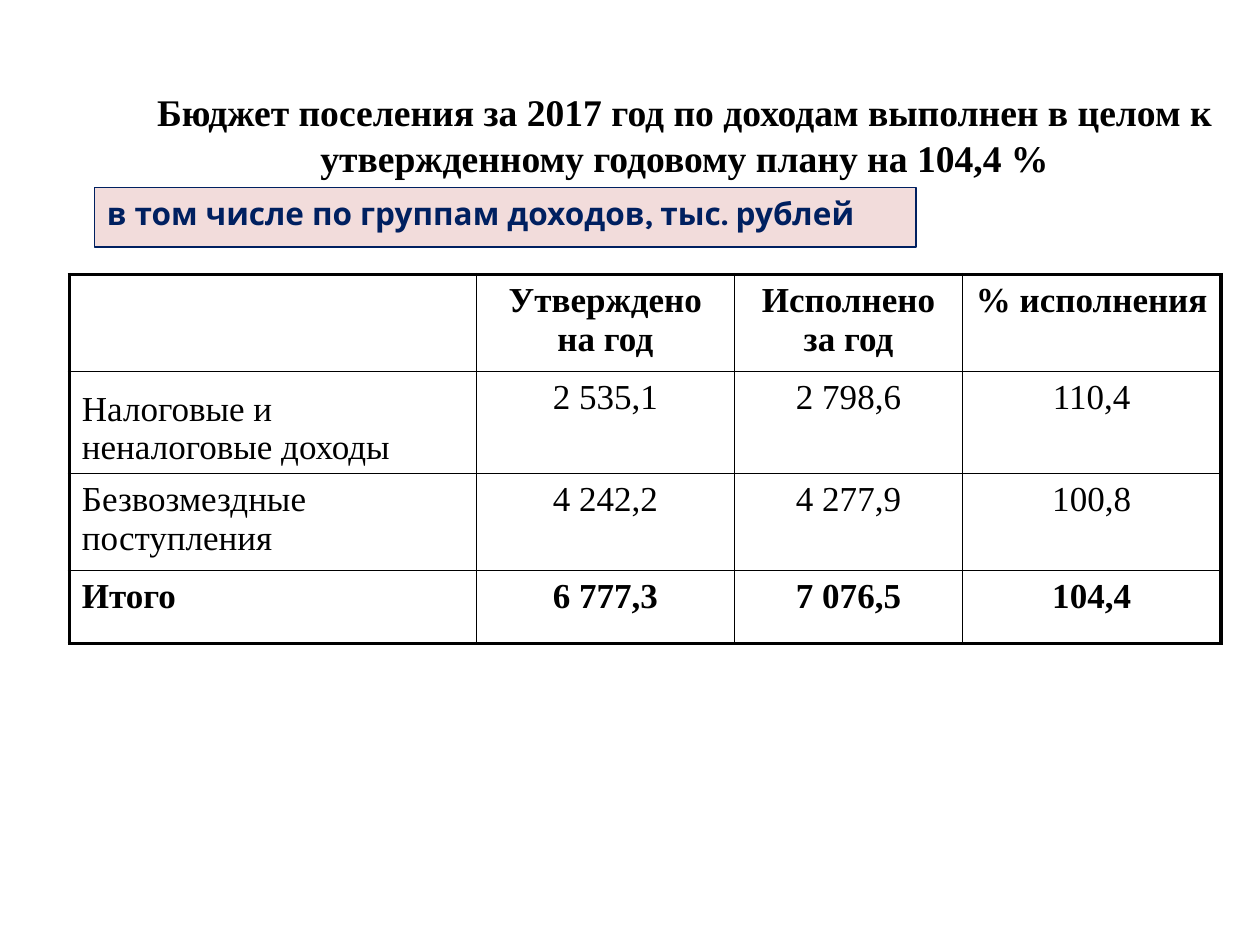
from lxml import etree
from pptx import Presentation
from pptx.dml.color import RGBColor
from pptx.enum.shapes import MSO_SHAPE
from pptx.enum.text import MSO_ANCHOR, PP_ALIGN
from pptx.oxml.ns import qn
from pptx.util import Inches, Pt

COLORS = {"black": "000000", "navy": "002060", "pink": "F2DCDB"}


def add_text(text_frame, text, size, font, color, bold, alignment):
    paragraph = text_frame.paragraphs[0]
    paragraph.alignment = alignment
    run = paragraph.add_run()
    run.text = text
    run.font.size = Pt(size)
    run.font.name = font
    run.font.bold = bold
    run.font.color.rgb = RGBColor.from_string(COLORS[color])


def set_borders(cell, widths):
    properties = cell._tc.get_or_add_tcPr()
    for position, (side, width) in enumerate(widths.items()):
        line = etree.Element(qn(f"a:{side}"), w=str(Pt(width)))
        fill = etree.SubElement(line, qn("a:solidFill"))
        etree.SubElement(fill, qn("a:srgbClr"), val=COLORS["black"])
        properties.insert(position, line)


presentation = Presentation()
presentation.slide_width = Inches(10)
presentation.slide_height = Inches(7.5)
slide = presentation.slides.add_slide(presentation.slide_layouts[6])

# Title
title = slide.shapes.add_textbox(Inches(1.02), Inches(0.66), Inches(8.83), Inches(0.82))
title.text_frame.word_wrap = True
add_text(
    title.text_frame,
    "Бюджет поселения за 2017 год по доходам выполнен в целом к утвержденному годовому плану на 104,4 %",
    21.5, "Times New Roman", "black", True, PP_ALIGN.CENTER,
)

# Subtitle box
subtitle = slide.shapes.add_shape(
    MSO_SHAPE.RECTANGLE, Inches(0.75), Inches(1.49), Inches(6.52), Inches(0.47)
)
subtitle.shadow.inherit = False
subtitle.fill.solid()
subtitle.fill.fore_color.rgb = RGBColor.from_string(COLORS["pink"])
subtitle.line.color.rgb = RGBColor.from_string(COLORS["navy"])
subtitle.line.width = Pt(0.75)
subtitle.text_frame.word_wrap = True
subtitle.text_frame.vertical_anchor = MSO_ANCHOR.TOP
add_text(
    subtitle.text_frame, "в том числе по группам доходов, тыс. рублей",
    18, "Karla", "navy", True, PP_ALIGN.LEFT,
)

# Income table
income_rows = [
    ["", "Утверждено на год", "Исполнено за год", "% исполнения"],
    ["Налоговые и неналоговые доходы", "2 535,1", "2 798,6", "110,4"],
    ["Безвозмездные поступления", "4 242,2", "4 277,9", "100,8"],
    ["Итого", "6 777,3", "7 076,5", "104,4"],
]
column_widths = [3.23, 2.05, 1.81, 2.05]
row_heights = [0.77, 0.81, 0.77, 0.58]
last_row = len(row_heights) - 1
last_column = len(column_widths) - 1

table = slide.shapes.add_table(
    len(row_heights), len(column_widths),
    Inches(0.55), Inches(2.18), Inches(sum(column_widths)), Inches(sum(row_heights)),
).table
table.first_row = False
table.horz_banding = False
for column, width in zip(table.columns, column_widths):
    column.width = Inches(width)
for row, height in zip(table.rows, row_heights):
    row.height = Inches(height)

for row_index, values in enumerate(income_rows):
    for column_index, value in enumerate(values):
        cell = table.cell(row_index, column_index)
        cell.fill.background()
        if value:
            add_text(
                cell.text_frame, value, 20, "Times New Roman", "black",
                row_index in (0, last_row),
                PP_ALIGN.CENTER if column_index else PP_ALIGN.LEFT,
            )
        # Thick outer frame, thin inner lines
        set_borders(cell, {
            "lnL": 2.25 if column_index == 0 else 1,
            "lnR": 2.25 if column_index == last_column else 1,
            "lnT": 2.25 if row_index == 0 else 1,
            "lnB": 2.25 if row_index == last_row else 1,
        })
table.cell(1, 0).vertical_anchor = MSO_ANCHOR.BOTTOM

presentation.save("out.pptx")
